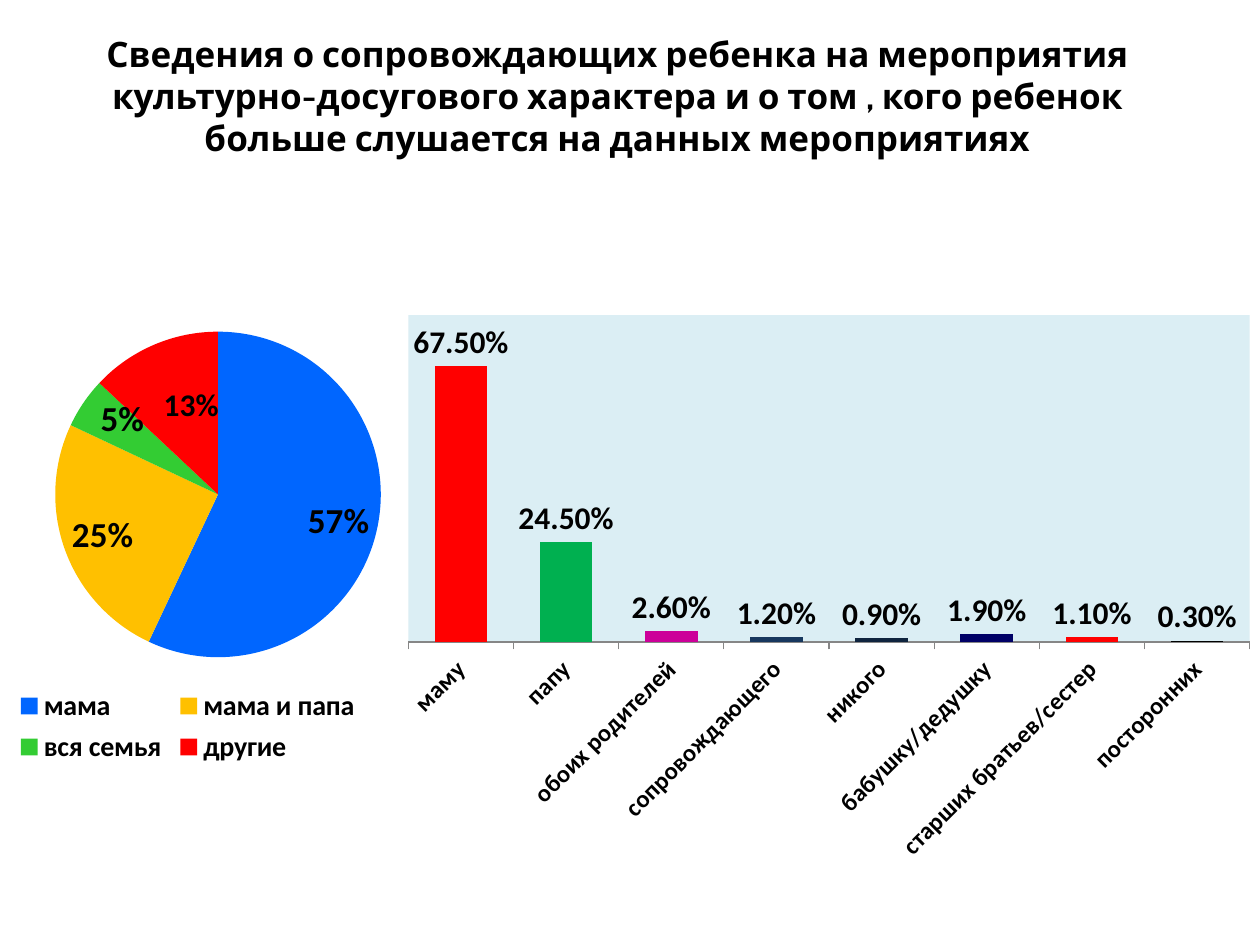
"""Build a slide with a pie of escorts and a column chart of whom the child obeys."""
import lxml.etree
import pptx
import pptx.chart.data
import pptx.dml.color
import pptx.enum.chart
import pptx.enum.text
import pptx.oxml
import pptx.oxml.ns
import pptx.util

Inches, Pt = pptx.util.Inches, pptx.util.Pt
qn = pptx.oxml.ns.qn
XL = pptx.enum.chart
POSITION = XL.XL_LABEL_POSITION

TITLE = ("Сведения о сопровождающих ребенка на мероприятия культурно-досугового "
         "характера и о том , кого ребенок больше слушается на данных мероприятиях")
ESCORTS = [
    ("мама", 57, "0066FF"),
    ("мама и папа", 25, "FFC000"),
    ("вся семья", 5, "33CC33"),
    ("другие ", 13, "FF0000"),
]
ESCORT_LABELS = [
    ("pie_label", POSITION.INSIDE_END, (0, 0.03)),
    ("pie_label", POSITION.INSIDE_END, (0, 0.02)),
    ("pie_label", POSITION.INSIDE_END, (0.02, -0.02)),
    ("small_label", POSITION.CENTER, (0.01, -0.03)),
]
OBEYED = [
    ("маму", 0.675, "FF0000"),
    ("папу", 0.245, "00B050"),
    ("обоих родителей", 0.026, "CC0099"),
    ("сопровождающего", 0.012, "17375E"),
    ("никого", 0.009, "0F243E"),
    ("бабушку/дедушку", 0.019, "000066"),
    ("старших братьев/сестер", 0.011, "FF0000"),
    ("посторонних", 0.003, "000000"),
]
THEME = {
    "text": "000000", "axis": "868686", "plot": "DBEEF4",
    "title_font": "Cabin", "font": "Calibri",
    "title": 20, "pie_label": 20, "small_label": 18, "column_label": 18,
    "legend": 16, "category": 14, "base": 10,
}


def rgb(color):
    return pptx.dml.color.RGBColor.from_string(color)


def style(font, size, bold=True, name=THEME["font"]):
    font.size, font.bold, font.name = Pt(THEME[size]), bold, name
    font.color.rgb = rgb(THEME["text"])


def set_layout(element, index, settings):
    for old in element.findall(qn("c:layout")):
        element.remove(old)
    layout = lxml.etree.Element(qn("c:layout"))
    manual = lxml.etree.SubElement(layout, qn("c:manualLayout"))
    for tag, value in settings:
        lxml.etree.SubElement(manual, qn("c:" + tag)).set("val", str(value))
    element.insert(index, layout)


def edge_box(box):
    return [("xMode", "edge"), ("yMode", "edge"), *zip("xywh", box)]


def add_chart(s, kind, rows, box, plot_box, number_format, label_size, position):
    data = pptx.chart.data.CategoryChartData()
    data.categories = [row[0] for row in rows]
    data.add_series("Series 1", [row[1] for row in rows])
    chart = s.shapes.add_chart(kind, *map(Inches, box), data).chart
    style(chart.font, "base", bold=False)
    chart.has_title = chart.has_legend = False
    series = chart.plots[0].series[0]
    for i, row in enumerate(rows):
        fill = series.points[i].format.fill
        fill.solid()
        fill.fore_color.rgb = rgb(row[2])
    labels = series.data_labels
    style(labels.font, label_size)
    labels.number_format, labels.number_format_is_linked = number_format, False
    labels.position = position
    pie = kind == XL.XL_CHART_TYPE.PIE
    labels.show_percentage, labels.show_value = pie, not pie
    set_layout(chart.element.find(".//" + qn("c:plotArea")), 0,
               [("layoutTarget", "inner"), *edge_box(plot_box)])
    return chart


def add_title(s):
    tf = s.shapes.add_textbox(*map(Inches, (0.31, 0.3, 9.18, 1.25))).text_frame
    tf.word_wrap = True
    tf.vertical_anchor = pptx.enum.text.MSO_ANCHOR.MIDDLE
    tf.margin_bottom = Inches(0.38)
    tf.text = TITLE
    p = tf.paragraphs[0]
    p.alignment = pptx.enum.text.PP_ALIGN.CENTER
    style(p.runs[0].font, "title", name=THEME["title_font"])


def add_pie(s):
    chart = add_chart(s, XL.XL_CHART_TYPE.PIE, ESCORTS, (-0.7, 2.2, 4.38, 3.92),
                      (0.26, 0.11, 0.59, 0.66), "0%", "pie_label", POSITION.INSIDE_END)
    points = chart.plots[0].series[0].points
    for i, (size, position, _) in enumerate(ESCORT_LABELS):
        label = points[i].data_label
        style(label.font, size)
        label.position = position
    nodes = chart.element.findall(".//" + qn("c:dLbl"))
    for node, (_, _, offset) in zip(nodes, ESCORT_LABELS):
        node.find(qn("c:showVal")).set("val", "0")
        node.find(qn("c:showPercent")).set("val", "1")
        set_layout(node, 1, zip("xy", offset))
    chart.has_legend = True
    legend = chart.legend
    legend.position = XL.XL_LEGEND_POSITION.BOTTOM
    legend.include_in_layout = False
    style(legend.font, "legend")
    set_layout(chart.element.find(".//" + qn("c:legend")), 1,
               edge_box((0.18, 0.82, 0.64, 0.18)))


def add_columns(s):
    chart = add_chart(s, XL.XL_CHART_TYPE.COLUMN_CLUSTERED, OBEYED, (2.96, 2.5, 7.03, 4.72),
                      (0.04, 0, 0.95, 0.55), "0.00%", "column_label", POSITION.OUTSIDE_END)
    chart.plots[0].gap_width = 100
    chart.plots[0].vary_by_categories = False
    value = chart.value_axis
    value.visible = value.has_major_gridlines = False
    value.minimum_scale, value.maximum_scale = 0, 0.8
    category = chart.category_axis
    category.major_tick_mark = XL.XL_TICK_MARK.OUTSIDE
    category.format.line.color.rgb = rgb(THEME["axis"])
    style(category.tick_labels.font, "category")
    body = chart.element.find(".//" + qn("c:catAx")).find(".//" + qn("a:bodyPr"))
    body.set("rot", "-2700000")
    area = chart.element.find(".//" + qn("c:plotArea"))
    sp = lxml.etree.SubElement(area, qn("c:spPr"))
    fill = lxml.etree.SubElement(sp, qn("a:solidFill"))
    lxml.etree.SubElement(fill, qn("a:srgbClr")).set("val", THEME["plot"])


def main():
    prs = pptx.Presentation()
    prs.slide_width, prs.slide_height = Inches(10), Inches(7.5)
    s = prs.slides.add_slide(prs.slide_layouts[6])
    add_title(s)
    add_pie(s)
    add_columns(s)
    prs.save("out.pptx")


if __name__ == "__main__":
    main()
